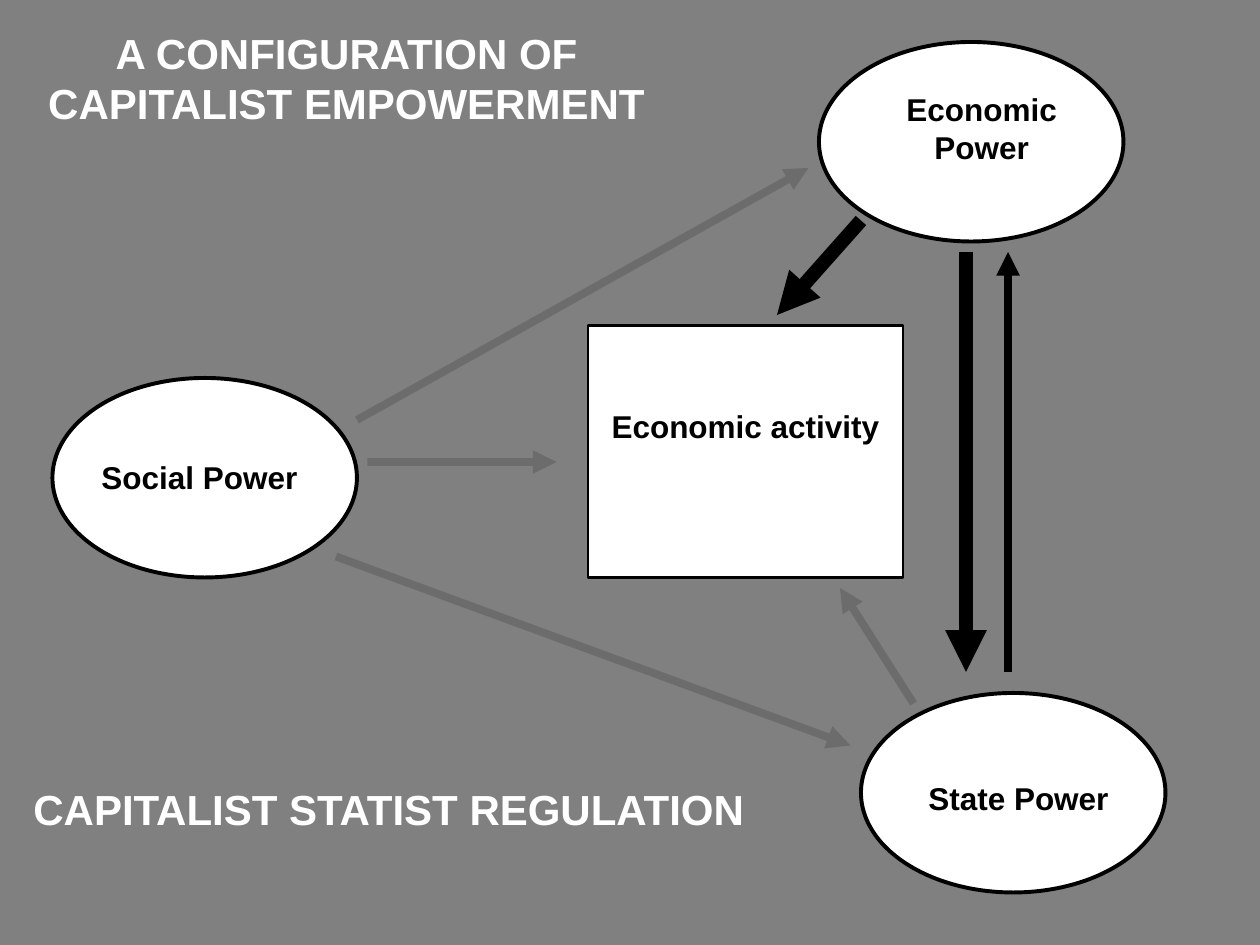
from typing import NamedTuple

from lxml.etree import SubElement
from pptx import Presentation
from pptx.dml.color import RGBColor
from pptx.enum.shapes import MSO_CONNECTOR, MSO_SHAPE
from pptx.enum.text import MSO_ANCHOR, PP_ALIGN
from pptx.oxml.ns import qn
from pptx.util import Inches, Pt

BLACK = RGBColor(0, 0, 0)
WHITE = RGBColor(255, 255, 255)
GREY = RGBColor(128, 128, 128)
FONT = "Arial"
COLUMNS, ROWS = 120, 90
CELL = Inches(10) // COLUMNS
OVAL_SIZE = (29, 19)
FAINT = 15
LABEL_LINE = 3.6


class Area(NamedTuple):
    column: float
    row: float
    columns: float
    rows: float

    def lengths(self) -> list[int]:
        return [round(value * CELL) for value in self]


class Power(NamedTuple):
    oval: tuple[int, int]
    label: Area
    text: str
    skipped_lines: int = 0


class Arrow(NamedTuple):
    start: tuple[int, int]
    end: tuple[int, int]
    width: float = 4.5
    opacity: int = 100


class Heading(NamedTuple):
    area: Area
    text: str
    alignment: PP_ALIGN


POWERS = [
    Power((5, 36), Area(8, 43, 22, 6), "Social Power"),
    Power((78, 4), Area(83, 8, 21, 11), "Economic\nPower"),
    Power((82, 66), Area(86, 70, 22, 11), "State Power", 1),
]
ARROWS = [
    Arrow((34, 40), (77, 16), opacity=FAINT),
    Arrow((32, 53), (81, 71), opacity=FAINT),
    Arrow((35, 44), (53, 44), opacity=FAINT),
    Arrow((87, 67), (80, 56), opacity=FAINT),
    Arrow((82, 21), (74, 30), 8),
    Arrow((92, 24), (92, 64), 8),
    Arrow((96, 64), (96, 24)),
]
HEADINGS = [
    Heading(Area(2, 2, 62, 11), "A CONFIGURATION OF CAPITALIST EMPOWERMENT", PP_ALIGN.CENTER),
    Heading(Area(2, 74, 76, 6), "CAPITALIST STATIST REGULATION", PP_ALIGN.LEFT),
]


def write(shape, text: str, size: int, color: RGBColor, alignment: PP_ALIGN) -> None:
    frame = shape.text_frame
    frame.text = text
    frame.word_wrap = True
    frame.vertical_anchor = MSO_ANCHOR.TOP
    for para in frame.paragraphs:
        para.alignment = alignment
        for span in para.runs:
            span.font.name = FONT
            span.font.size = Pt(size)
            span.font.bold = True
            span.font.color.rgb = color


def add_panel(page, kind: MSO_SHAPE, area: Area, border: float = 0):
    panel = page.shapes.add_shape(kind, *area.lengths())
    panel.shadow.inherit = False
    panel.fill.solid()
    panel.fill.fore_color.rgb = WHITE
    if border:
        panel.line.color.rgb = BLACK
        panel.line.width = Pt(border)
    else:
        panel.line.fill.background()
    return panel


def add_label(panel, text: str, skipped_lines: int = 0) -> None:
    write(panel, text, 18, BLACK, PP_ALIGN.CENTER)
    panel.text_frame.margin_top = Inches(0.05) + round(skipped_lines * LABEL_LINE * CELL)


def add_power(page, power: Power) -> None:
    add_panel(page, MSO_SHAPE.OVAL, Area(*power.oval, *OVAL_SIZE), 2.25)
    label = add_panel(page, MSO_SHAPE.RECTANGLE, power.label)
    add_label(label, power.text, power.skipped_lines)


def add_arrow(page, arrow: Arrow) -> None:
    ends = [value * CELL for value in (*arrow.start, *arrow.end)]
    connector = page.shapes.add_connector(MSO_CONNECTOR.STRAIGHT, *ends)
    connector.line.color.rgb = BLACK
    connector.line.width = Pt(arrow.width)
    properties = connector._element.spPr
    line = properties.find(qn("a:ln"))
    if arrow.opacity < 100:
        color = line.find(qn("a:solidFill")).find(qn("a:srgbClr"))
        SubElement(color, qn("a:alpha"), val=str(arrow.opacity * 1000))
    SubElement(line, qn("a:tailEnd"), type="triangle")
    SubElement(properties, qn("a:effectLst"))


def add_heading(page, heading: Heading) -> None:
    box = page.shapes.add_textbox(*heading.area.lengths())
    write(box, heading.text, 24, WHITE, heading.alignment)


def main() -> None:
    deck = Presentation()
    deck.slide_width, deck.slide_height = COLUMNS * CELL, ROWS * CELL
    page = deck.slides.add_slide(deck.slide_layouts[6])
    page.background.fill.solid()
    page.background.fill.fore_color.rgb = GREY
    for power in POWERS:
        add_power(page, power)
    for arrow in ARROWS:
        add_arrow(page, arrow)
    for heading in HEADINGS:
        add_heading(page, heading)
    activity = add_panel(page, MSO_SHAPE.RECTANGLE, Area(56, 31, 30, 24), 1.5)
    add_label(activity, "Economic activity", 2)
    deck.save("out.pptx")


if __name__ == "__main__":
    main()
